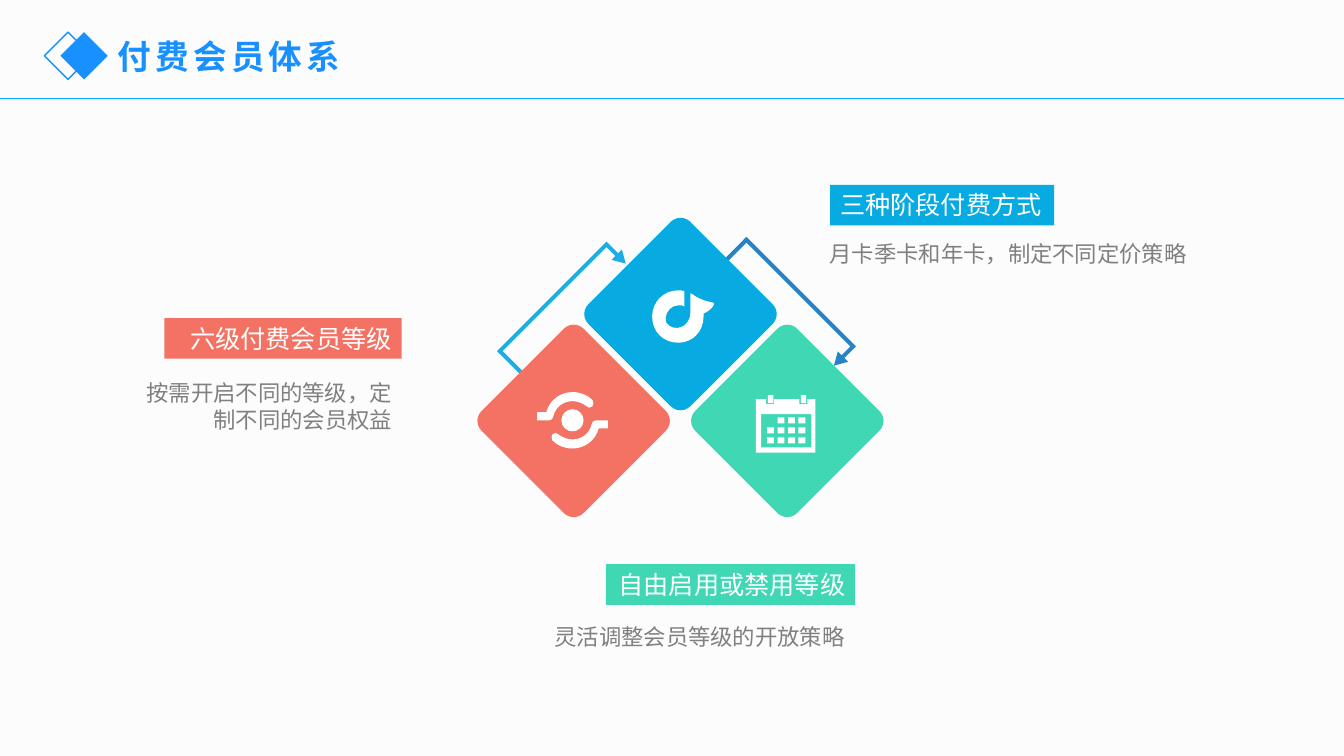
"""Build the paid membership slide: three linked diamonds with captions."""
from dataclasses import dataclass

from lxml import etree
from pptx import Presentation
from pptx.dml.color import RGBColor
from pptx.enum.shapes import MSO_CONNECTOR, MSO_SHAPE
from pptx.enum.text import MSO_ANCHOR, MSO_AUTO_SIZE, PP_ALIGN
from pptx.oxml.ns import qn
from pptx.util import Pt

RECT, ROUNDED = MSO_SHAPE.RECTANGLE, MSO_SHAPE.ROUNDED_RECTANGLE
DIAMOND, BENT_ARROW = MSO_SHAPE.DIAMOND, MSO_SHAPE.BENT_ARROW
STRAIGHT = MSO_CONNECTOR.STRAIGHT
LEFT, RIGHT = PP_ALIGN.LEFT, PP_ALIGN.RIGHT
TOP = MSO_ANCHOR.TOP
NO_FIT = MSO_AUTO_SIZE.NONE


@dataclass(frozen=True)
class Theme:
    font: str = "Noto Sans CJK SC"
    title_size: int = 24
    label_size: int = 18
    body_size: int = 16
    paper: str = "FCFCFC"
    brand: str = "1890FF"
    rule: str = "00ADFF"
    white: str = "FFFFFF"
    gray: str = "808080"
    coral: str = "F37264"
    sky: str = "07AAE1"
    mint: str = "3FD7B4"
    rising: str = "1CADE4"
    falling: str = "2683C6"


theme = Theme()
deck = Presentation()
deck.slide_width, deck.slide_height = Pt(960), Pt(540)
title_layout = deck.slide_layouts[5]
slide = deck.slides.add_slide(title_layout)
slide.background.fill.solid()
slide.background.fill.fore_color.rgb = RGBColor.from_string(theme.paper)
shapes = slide.shapes


def add_block(kind, left, top, width, height, color, rotation=0):
    block = shapes.add_shape(kind, Pt(left), Pt(top), Pt(width), Pt(height))
    block.shadow.inherit = False
    block.fill.solid()
    block.fill.fore_color.rgb = RGBColor.from_string(color)
    block.line.fill.background()
    block.rotation = rotation
    return block


def write(frame, text, size, color, align):
    frame.word_wrap = True
    frame.auto_size = NO_FIT
    frame.vertical_anchor = TOP
    paragraph = frame.paragraphs[0]
    paragraph.alignment = align
    run = paragraph.add_run()
    run.text = text
    run.font.size = Pt(size)
    run.font.color.rgb = RGBColor.from_string(color)
    run.font.name = theme.font
    etree.SubElement(run.font._element, qn("a:ea")).set("typeface", theme.font)
    return run


header_rule = shapes.add_connector(STRAIGHT, Pt(0), Pt(70.56), Pt(960), Pt(70.56))
header_rule.line.color.rgb = RGBColor.from_string(theme.rule)
header_rule.line.width = Pt(1)
etree.SubElement(header_rule._element.spPr, qn("a:effectLst"))

hollow_diamond = add_block(DIAMOND, 31.7, 23, 33.8, 33.8, theme.paper)
hollow_diamond.fill.background()
hollow_diamond.line.color.rgb = RGBColor.from_string(theme.brand)
hollow_diamond.line.width = Pt(1)
solid_diamond = add_block(DIAMOND, 43.2, 23, 33.8, 33.8, theme.brand)
for header_part in (header_rule, hollow_diamond, solid_diamond):
    title_layout.shapes._spTree.append(header_part._element)

title = shapes.title
title.left, title.top, title.width, title.height = Pt(77), Pt(22.3), Pt(219), Pt(36)
heading = write(title.text_frame, "付费会员体系", theme.title_size, theme.brand, LEFT)
heading.font.bold = True
heading.font._element.set("spc", "300")

captions = [
    ("六级付费会员等级", theme.coral, RIGHT, (117.4, 227.2, 169.5, 29),
     "按需开启不同的等级，定制不同的会员权益", (82.8, 267.1, 204.5, 46)),
    ("三种阶段付费方式", theme.sky, LEFT, (593, 132, 160, 29),
     "月卡季卡和年卡，制定不同定价策略", (585.4, 167.8, 282.2, 26.6)),
    ("自由启用或禁用等级", theme.mint, RIGHT, (432.7, 403, 178.2, 29),
     "灵活调整会员等级的开放策略", (373, 441.6, 237.6, 26.6)),
]
for label, color, align, label_box, detail, detail_box in captions:
    tag = add_block(RECT, *label_box, color)
    write(tag.text_frame, label, theme.label_size, theme.white, align)
    note = shapes.add_textbox(*map(Pt, detail_box))
    write(note.text_frame, detail, theme.body_size, theme.gray, align)

links = [
    (392.4, 160.5, 45, theme.rising, 354.2, 257),
    (555.8, 159.8, 135, theme.falling, 515.5, 177.1),
]
for left, top, rotation, color, stub_left, stub_top in links:
    arrow = add_block(BENT_ARROW, left, top, 20.9, 114.5, color, rotation)
    for index, ratio in enumerate((0.137, 0.25, 0.436, 0)):
        arrow.adjustments[index] = ratio
    add_block(RECT, stub_left, stub_top, 20.9, 2.9, color, rotation)

tile_side, tile_step = 103, 76.3
for column, row, color in ((1, 1, theme.mint), (-1, 1, theme.coral), (0, 0, theme.sky)):
    tile = add_block(ROUNDED, 434.6 + column * tile_step, 172.8 + row * tile_step,
                     tile_side, tile_side, color, 315)
    tile.adjustments[0] = 0.096

for row in range(3):
    for column in range(4):
        if (row, column) != (0, 0):
            add_block(RECT, 547.9 + 7.5 * column, 298.1 + 7.2 * row, 5, 4.3, theme.white)

calendar_outline = [
    (809, 396), (801, 396), (801, 401), (793, 401), (793, 396), (768, 396), (768, 401),
    (760, 401), (760, 396), (750, 396), (750, 449), (809, 449),
]
calendar_window = [(805, 444), (755, 444), (755, 411), (805, 411)]
lower_swirl = [
    (592, 417), (588, 417, 587, 420, 587, 421), (585, 430, 577, 436, 568, 436),
    (563, 436, 558, 434, 554, 431), (553, 429, 550, 429, 548, 431),
    (547, 432, 547, 435, 548, 437), (553, 442, 560, 445, 568, 445),
    (580, 445, 591, 437, 594, 425), (603, 425), (603, 417),
]
upper_swirl = [
    tuple((834 if index % 2 else 1136) - value for index, value in enumerate(segment))
    for segment in lower_swirl
]
hub = [
    (557, 417), (557, 423, 562, 428, 568, 428), (574, 428, 579, 423, 579, 417),
    (579, 411, 574, 406, 568, 406), (562, 406, 557, 411, 557, 417),
]
music_note = [
    (698, 311), (706, 308, 711, 300, 707, 300), (699, 299, 691, 295, 687, 292),
    (686, 292, 686, 292, 685, 291), (685, 310), (685, 317, 681, 322, 677, 324),
    (671, 327, 664, 325, 661, 320), (659, 314, 662, 307, 668, 304),
    (672, 303, 676, 302, 679, 304), (679, 289), (677, 288, 675, 288, 673, 288),
    (658, 288, 647, 300, 647, 314), (647, 329, 658, 340, 673, 340),
    (687, 340, 698, 329, 698, 314), (698, 313, 698, 312, 698, 311),
]
unit = 0.72
for icon in ([calendar_outline, calendar_window], [lower_swirl, upper_swirl, hub], [music_note]):
    pen = None
    for contour in icon:
        ends = [(Pt(segment[-2] * unit), Pt(segment[-1] * unit)) for segment in contour]
        if pen:
            pen.move_to(*ends[0])
        else:
            pen = shapes.build_freeform(*ends[0])
        pen.add_line_segments(ends[1:], close=True)
    glyph = pen.convert_to_shape()
    glyph.shadow.inherit = False
    glyph.fill.solid()
    glyph.fill.fore_color.rgb = RGBColor.from_string(theme.white)
    glyph.line.fill.background()

    segments = [segment for contour in icon for segment in contour[1:]]
    for edge, segment in zip(list(glyph._element.iter(qn("a:lnTo"))), segments):
        if len(segment) == 6:
            edge.tag = qn("a:cubicBezTo")
            for index in (0, 1):
                control = etree.Element(qn("a:pt"))
                control.set("x", str(Pt(segment[2 * index] * unit) - glyph.left))
                control.set("y", str(Pt(segment[2 * index + 1] * unit) - glyph.top))
                edge.insert(index, control)

for ring_left in (548.6, 572):
    add_block(RECT, ring_left, 282.2, 3.9, 5.8, theme.white)

deck.save("out.pptx")
